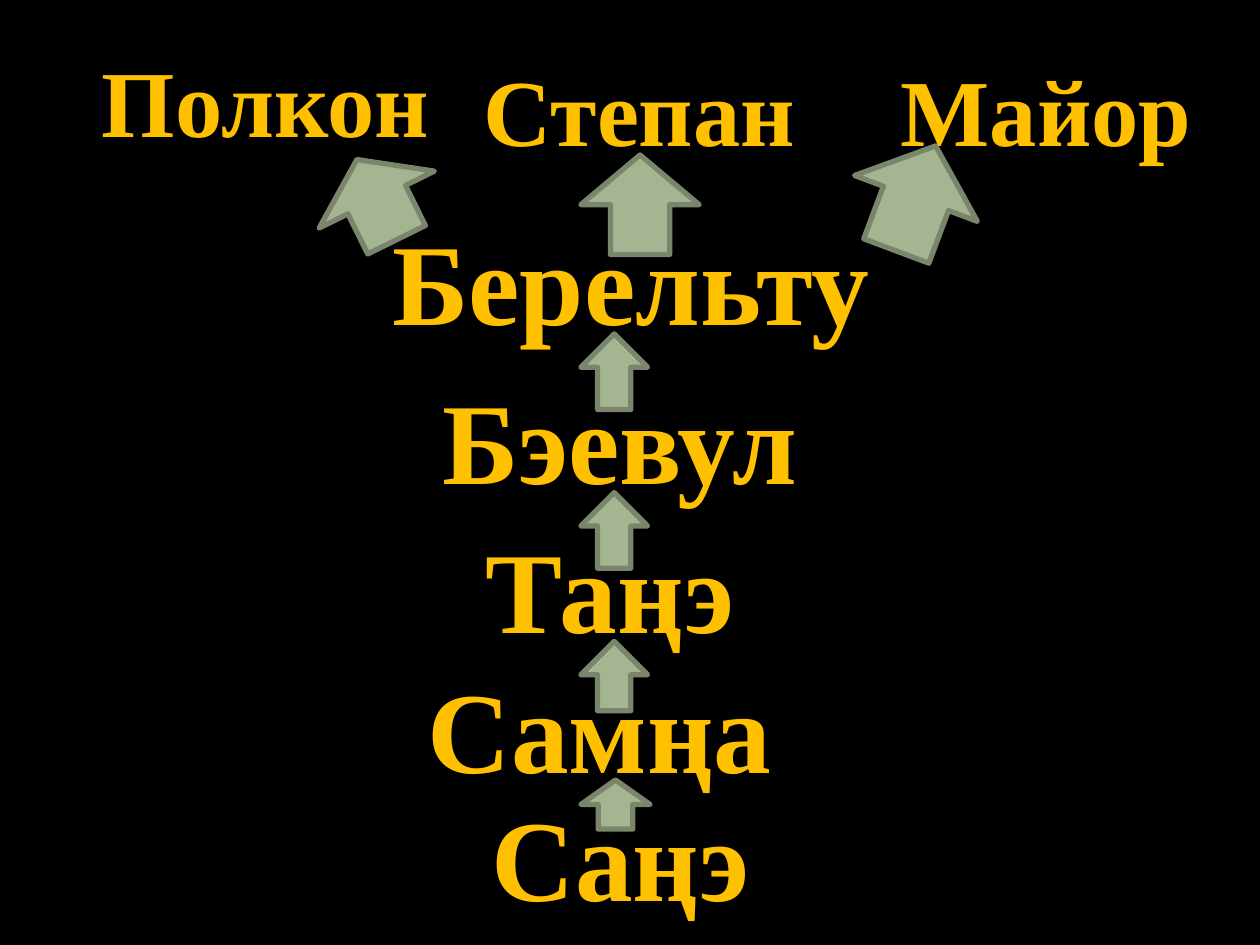
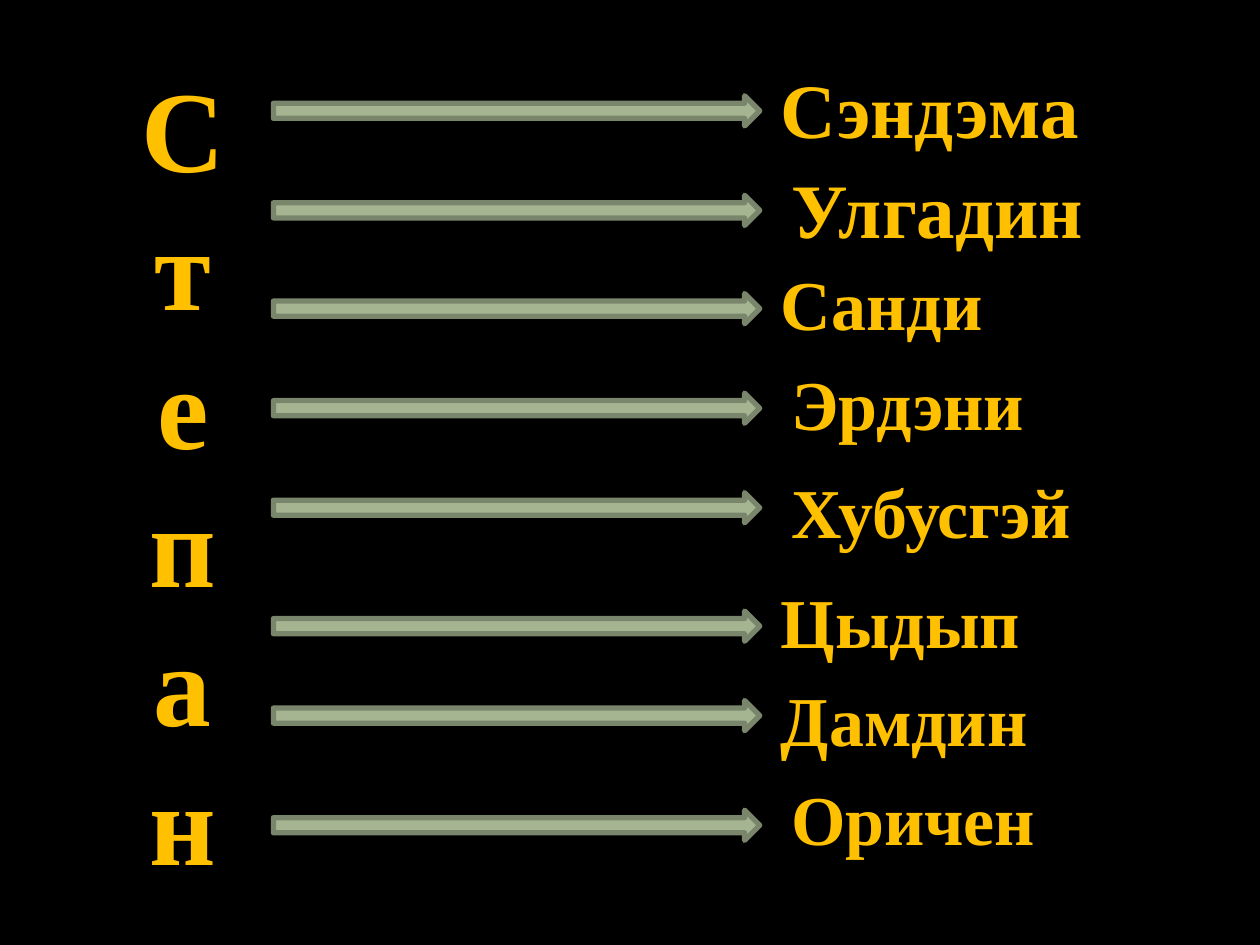
from dataclasses import dataclass

from pptx import Presentation
from pptx.dml.color import RGBColor
from pptx.enum.shapes import MSO_SHAPE
from pptx.enum.text import MSO_AUTO_SIZE, PP_ALIGN
from pptx.util import Inches, Pt

UP, RIGHT = MSO_SHAPE.UP_ARROW, MSO_SHAPE.RIGHT_ARROW
LEFT, MID = PP_ALIGN.LEFT, PP_ALIGN.CENTER
FIT = MSO_AUTO_SIZE.SHAPE_TO_FIT_TEXT


@dataclass(frozen=True)
class Theme:
    back = RGBColor.from_string("000000")
    gold = RGBColor.from_string("FFC000")
    sage = RGBColor.from_string("A5B592")
    edge = RGBColor.from_string("7A866C")
    font = "Times New Roman"
    line = 3
    huge, big, mid, small = 66, 54, 44, 40


THEME = Theme()
HIGH = {THEME.huge: 1.21, THEME.big: 1.01, THEME.mid: 0.84, THEME.small: 0.77}

# name, left, top, width, arrow top, arrow width, arrow height
TRUNK = [
    ("Саңэ", 3.27, 6.19, 3.31, 6.19, 0.55, 0.39),
    ("Самңа", 3.03, 5.17, 3.46, 5.09, 0.53, 0.55),
    ("Таңэ", 3.69, 4.06, 2.3, 3.91, 0.53, 0.6),
    ("Бэевул", 3.19, 2.88, 3.46, 2.65, 0.53, 0.6),
    ("Берельту", 2.64, 1.62, 4.74, 1.23, 0.94, 0.79),
]
TRUNK_X = 4.61
SONS = [
    ("Полкон ", 0.35, 0.29, 3.7, MID),
    ("Степан", 3.74, 0.36, 3.57, LEFT),
    ("Майор", 7.05, 0.36, 2.95, LEFT),
]
SIDES = [
    ((2.48, 1.23, 1.02, 0.71), 333.7, 0.5),
    ((6.75, 1.13, 1.04, 0.89), 20.5, 0.53),
]

HEAD = "Степан"
# name, indent, text top, arrow top, size
KIN = [
    ("Сэндэма", 0, 0.44, 0.76, THEME.mid),
    ("Улгадин", 0.08, 1.23, 1.55, THEME.mid),
    ("Санди", 0, 2.02, 2.33, THEME.small),
    ("Эрдэни", 0.08, 2.81, 3.12, THEME.small),
    ("Хубусгэй", 0.08, 3.67, 3.91, THEME.small),
    ("Цыдып", 0, 4.54, 4.85, THEME.small),
    ("Дамдин", 0, 5.32, 5.56, THEME.small),
    ("Оричен", 0.08, 6.11, 6.43, THEME.small),
]
KIN_X, KIN_W = 6.1, 3.3
ROW_X, ROW_W, ROW_H = 2.17, 3.86, 0.24


def add_name(slide, text, left, top, width, size, align=LEFT, high=None):
    area = map(Inches, (left, top, width, high or HIGH[size]))
    frame = slide.shapes.add_textbox(*area).text_frame
    frame.word_wrap = True
    frame.auto_size = FIT
    para = frame.paragraphs[0]
    para.text = text
    para.alignment = align
    font = para.font
    font.name, font.size, font.bold = THEME.font, Pt(size), True
    font.color.rgb = THEME.gold
    return frame


def add_arrow(slide, kind, area, turn=0, neck=0.5):
    arrow = slide.shapes.add_shape(kind, *map(Inches, area))
    arrow.shadow.inherit = False
    arrow.fill.solid()
    arrow.fill.fore_color.rgb = THEME.sage
    arrow.line.color.rgb = THEME.edge
    arrow.line.width = Pt(THEME.line)
    arrow.rotation = turn
    arrow.adjustments[0] = neck


def draw_tree(slide):
    for name, left, top, width, tip, wide, high in TRUNK:
        add_name(slide, name, left, top, width, THEME.huge, MID)
        add_arrow(slide, UP, (TRUNK_X, tip, wide, high))
    for area, turn, neck in SIDES:
        add_arrow(slide, UP, area, turn, neck)
    for name, left, top, width, align in SONS:
        add_name(slide, name, left, top, width, THEME.big, align)


def draw_kin(slide):
    frame = add_name(slide, HEAD, 0.75, 0, 1.4, THEME.huge, MID, 7.5)
    frame._txBody.bodyPr.set("vert", "wordArtVert")
    for name, shift, top, tip, size in KIN:
        add_name(slide, name, KIN_X + shift, top, KIN_W, size)
        add_arrow(slide, RIGHT, (ROW_X, tip, ROW_W, ROW_H))


def main():
    deck = Presentation()
    deck.slide_width, deck.slide_height = Inches(10), Inches(7.5)
    fill = deck.slide_master.background.fill
    fill.solid()
    fill.fore_color.rgb = THEME.back
    for draw in (draw_tree, draw_kin):
        draw(deck.slides.add_slide(deck.slide_layouts[6]))
    deck.save("out.pptx")


if __name__ == "__main__":
    main()
